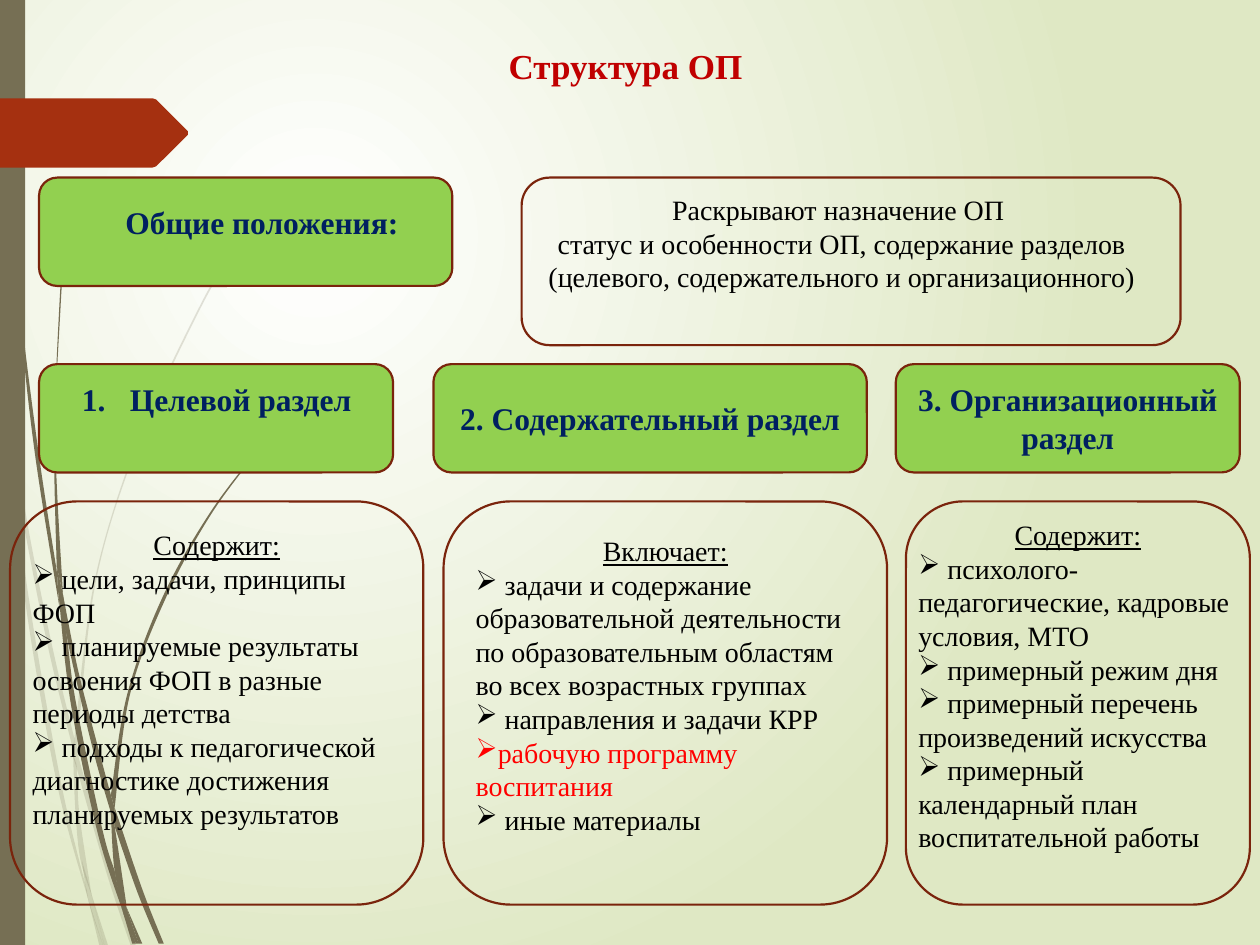
from dataclasses import dataclass
from typing import Optional

from lxml.etree import SubElement
from pptx import Presentation
from pptx.dml.color import RGBColor
from pptx.enum.shapes import MSO_SHAPE
from pptx.enum.text import MSO_ANCHOR, MSO_AUTO_SIZE, PP_ALIGN
from pptx.oxml.ns import qn
from pptx.util import Inches, Pt

FONT, BULLET_FONT, BULLET = "Times New Roman", "Wingdings", "Ø"
BROWN, ARROW_RED, BORDER = "766F54", "A53010", "7A240C"
GREEN, NAVY, BLACK = "92D050", "002060", "000000"
TITLE_RED, ACCENT_RED = "C00000", "FF0000"
HEADING_TOP, HEADING_HEIGHT = 2.89, 0.86
PANEL_TOP, PANEL_HEIGHT = 3.98, 3.2


@dataclass
class Blade:
    down: list[tuple[float, float]]
    back: list[tuple[float, float]]


@dataclass
class Frame:
    left: float
    top: float
    width: float
    height: float
    fill: Optional[str] = None


@dataclass
class Item:
    text: str
    color: str = BLACK


PALE_BLADES = [
    Blade([(0, 2.82), (0.06, 3.22), (0.08, 3.5)], [(0.07, 3.44), (0, 2.99)]),
    Blade([(0.1, 3.45), (0.25, 4.33), (0.43, 5.2), (0.59, 5.86)],
          [(0.59, 5.99), (0.4, 5.22), (0.25, 4.49), (0.12, 3.76), (0.1, 3.45)]),
    Blade([(0.61, 5.96), (0.88, 6.92), (1.08, 7.51)], [(1.04, 7.51), (0.85, 6.94), (0.61, 6.1)]),
    Blade([(0.73, 7.11), (0.86, 7.51)], [(0.83, 7.51), (0.73, 7.11)]),
    Blade([(0.08, 3.5), (0.19, 4.7), (0.45, 6.21), (0.7, 7.14)],
          [(0.69, 7.07), (0.48, 6.19), (0.22, 4.69), (0.12, 3.76), (0.08, 3.5)]),
    Blade([(0.58, 5.99), (0.6, 6.46), (0.64, 6.83), (0.73, 7.11)],
          [(0.72, 7.06), (0.63, 6.46), (0.61, 6.1), (0.58, 5.99)]),
    Blade([(2.17, 1.53), (1.86, 1.97), (1.58, 2.44), (1.1, 3.48), (0.75, 4.61), (0.59, 5.86)],
          [(0.61, 5.96), (0.76, 4.62), (1.11, 3.49), (1.59, 2.45), (1.87, 1.98), (2.17, 1.54)]),
    Blade([(0.7, 7.14), (0.82, 7.51)], [(0.79, 7.51), (0.7, 7.14)]),
    Blade([(0.59, 5.86), (0.58, 5.99), (0.61, 6.1)], [(0.61, 5.96), (0.59, 5.86)]),
    Blade([(0.65, 6.83), (0.7, 7.14), (0.82, 7.51)], [(0.83, 7.51), (0.73, 7.11), (0.65, 6.83)]),
]
DARK_BLADES = [
    Blade([(0.02, 0), (0.05, 1.1), (0.14, 2.33), (0.27, 3.55), (0.47, 4.81)],
          [(0.45, 4.53), (0.3, 3.55), (0.15, 2.32), (0.06, 1.09), (0.03, 0)]),
    Blade([(0.5, 4.72), (0.62, 5.32), (0.77, 5.9), (0.88, 6.31)],
          [(0.88, 6.45), (0.73, 5.92), (0.53, 5.05), (0.5, 4.72)]),
    Blade([(0.91, 6.41), (1.13, 7.06), (1.3, 7.49)], [(1.26, 7.49), (1.09, 7.08), (0.91, 6.56)]),
    Blade([(0.47, 4.77), (0.56, 5.57), (0.77, 6.59), (0.97, 7.22)],
          [(0.91, 6.91), (0.81, 6.57), (0.6, 5.56), (0.53, 5.05), (0.47, 4.77)]),
    Blade([(0.58, 1.41), (0.51, 1.93), (0.47, 2.45), (0.43, 3.49), (0.45, 4.49)],
          [(0.5, 4.72), (0.44, 3.49), (0.48, 2.45), (0.52, 1.93), (0.58, 1.41)]),
    Blade([(1, 7.19), (1.13, 7.49)], [(1.1, 7.49), (1, 7.19)]),
    Blade([(0.45, 4.49), (0.47, 4.77), (0.53, 5.05)], [(0.5, 4.72), (0.45, 4.49)]),
    Blade([(2.15, 3.44), (1.68, 4.05), (1.29, 4.74), (1.01, 5.51), (0.88, 6.31)],
          [(0.91, 6.41), (1.03, 5.52), (1.31, 4.76), (1.69, 4.06), (2.16, 3.44)]),
    Blade([(0.97, 7.22), (1.08, 7.49)], [(1.05, 7.49), (0.97, 7.22)]),
    Blade([(0.88, 6.45), (0.91, 6.91), (1, 7.19)], [(1, 7.16), (0.91, 6.56), (0.88, 6.45)]),
    Blade([(0.88, 6.31), (0.88, 6.45), (0.91, 6.56)], [(0.91, 6.41), (0.88, 6.31)]),
    Blade([(0.91, 6.91), (0.97, 7.22), (1.08, 7.49)], [(1.1, 7.49), (1, 7.19), (0.91, 6.91)]),
]
ARROW = [(0, 0.78), (1.21, 0.78), (1.24, 0.79), (1.49, 1.04), (1.49, 1.07), (1.24, 1.32),
         (1.21, 1.33), (0, 1.33)]


def color_of(value: str) -> RGBColor:
    return RGBColor.from_string(value)


def add_outline(slide, points, color: str, alpha: Optional[int] = None):
    corners = [(Inches(x), Inches(y)) for x, y in points]
    builder = slide.shapes.build_freeform(*corners[0])
    builder.add_line_segments(corners[1:], close=True)
    shape = builder.convert_to_shape()
    shape.shadow.inherit = False
    shape.fill.solid()
    shape.fill.fore_color.rgb = color_of(color)
    shape.line.fill.background()
    if alpha is not None:
        color_node = next(shape._element.spPr.iter(qn("a:srgbClr")))
        SubElement(color_node, qn("a:alpha"), val=str(alpha * 1000))
    return shape


def bend(shape, lines, side):
    padded = [side[0], *side, side[-1]]
    for line, a, b, c, d in zip(lines, padded, padded[1:], padded[2:], padded[3:]):
        first = [q + (r - p) / 6 for p, q, r in zip(a, b, c)]
        second = [q - (r - p) / 6 for p, q, r in zip(b, c, d)]
        line.tag = qn("a:cubicBezTo")
        for index, (x, y) in enumerate((first, second)):
            point = SubElement(line, qn("a:pt"), x=str(Inches(x) - shape.left),
                               y=str(Inches(y) - shape.top))
            line.insert(index, point)


def add_blade(slide, blade: Blade, alpha: Optional[int] = None):
    shape = add_outline(slide, blade.down + blade.back, BROWN, alpha)
    lines = list(shape._element.iter(qn("a:lnTo")))
    bend(shape, lines, blade.down)
    bend(shape, lines[len(blade.down):], blade.back)


def add_frame(slide, frame: Frame, kind=MSO_SHAPE.ROUNDED_RECTANGLE, border: Optional[str] = BORDER):
    box = slide.shapes.add_shape(kind, Inches(frame.left), Inches(frame.top),
                                 Inches(frame.width), Inches(frame.height))
    box.shadow.inherit = False
    if frame.fill:
        box.fill.solid()
        box.fill.fore_color.rgb = color_of(frame.fill)
    else:
        box.fill.background()
    if border:
        box.line.color.rgb = color_of(border)
        box.line.width = Pt(1.25)
    else:
        box.line.fill.background()
    box.text_frame.word_wrap = True
    box.text_frame.vertical_anchor = MSO_ANCHOR.MIDDLE
    return box


def add_text_box(slide, left: float, top: float, width: float, height: float):
    box = slide.shapes.add_textbox(Inches(left), Inches(top), Inches(width), Inches(height))
    box.text_frame.word_wrap = True
    box.text_frame.auto_size = MSO_AUTO_SIZE.SHAPE_TO_FIT_TEXT
    return box


def write(box, text: str, *, size=16, color=BLACK, bold=False, underline=False,
          align=PP_ALIGN.CENTER, bullet=False, numbered=False):
    frame = box.text_frame
    para = frame.add_paragraph() if frame.text else frame.paragraphs[0]
    para.alignment = align
    span = para.add_run()
    span.text = text
    span.font.name, span.font.size = FONT, Pt(size)
    span.font.bold, span.font.underline = bold, underline
    span.font.color.rgb = color_of(color)
    properties = para._p.get_or_add_pPr()
    if bullet:
        SubElement(properties, qn("a:buFont"), typeface=BULLET_FONT, charset="2")
        SubElement(properties, qn("a:buChar"), char=BULLET)
    if numbered:
        properties.set("marL", str(Inches(0.38)))
        properties.set("indent", str(-Inches(0.38)))
        SubElement(properties, qn("a:buAutoNum"), type="arabicPeriod")


def write_heading(box, text: str, numbered: bool = False):
    write(box, text, size=18, color=NAVY, bold=True, numbered=numbered)


def write_list(box, heading: str, *items: Item):
    write(box, heading, underline=True)
    for item in items:
        write(box, item.text, color=item.color, align=PP_ALIGN.LEFT, bullet=True)


def paint_background(slide):
    fill = slide.background.fill
    fill.gradient()
    for stop, color in zip(fill.gradient_stops, ("FFFFFF", "DFE8C4")):
        stop.color.rgb = color_of(color)
    gradient = next(slide._element.iter(qn("a:gradFill")))
    gradient.remove(gradient.find(qn("a:lin")))
    circle = SubElement(gradient, qn("a:path"), path="circle")
    SubElement(circle, qn("a:fillToRect"), l="50000", t="50000", r="100000", b="100000")


def main():
    deck = Presentation()
    deck.slide_width, deck.slide_height = Inches(10), Inches(7.5)
    slide = deck.slides.add_slide(deck.slide_layouts[5])
    paint_background(slide)
    for blades, alpha in ((PALE_BLADES, 20), (DARK_BLADES, None)):
        for blade in blades:
            add_blade(slide, blade, alpha)
    add_frame(slide, Frame(0, 0, 0.2, 7.5, BROWN), MSO_SHAPE.RECTANGLE, None)
    add_outline(slide, ARROW, ARROW_RED)

    title = slide.shapes.title
    title.left, title.top, title.width, title.height = map(Inches, (0.5, 0.3, 9, 0.95))
    title.text_frame.vertical_anchor = MSO_ANCHOR.TOP
    write(title, "Структура ОП ", size=20, color=TITLE_RED, bold=True)
    add_frame(slide, Frame(0.31, 1.41, 3.28, HEADING_HEIGHT, GREEN))
    write_heading(add_text_box(slide, 0.55, 1.56, 3.12, 0.4), "Общие положения: ")
    add_frame(slide, Frame(4.14, 1.41, 5.23, 1.33))
    purpose = add_text_box(slide, 4.14, 1.48, 5.08, 0.91)
    write(purpose, "Раскрывают назначение ОП ")
    write(purpose, "статус и особенности ОП, содержание разделов "
                   "(целевого, содержательного и организационного)")
    headings = [add_frame(slide, Frame(left, HEADING_TOP, width, HEADING_HEIGHT, GREEN))
                for left, width in ((0.31, 2.81), (3.44, 3.44), (7.11, 2.73))]
    write_heading(add_text_box(slide, 0.39, 2.97, 2.66, 0.4), "Целевой раздел", numbered=True)
    write_heading(headings[1], "2. Содержательный раздел")
    write_heading(headings[2], "3. Организационный раздел")
    panels = [add_frame(slide, Frame(left, PANEL_TOP, width, PANEL_HEIGHT))
              for left, width in ((0.08, 3.28), (3.52, 3.52), (7.19, 2.73))]
    write_list(add_text_box(slide, 0.16, 4.14, 3.12, 2.52), "Содержит:",
               Item(" цели, задачи, принципы ФОП"),
               Item(" планируемые результаты освоения ФОП в разные периоды детства"),
               Item(" подходы к педагогической диагностике достижения планируемых результатов"))
    panels[1].text_frame.margin_bottom = Inches(0.34)
    write_list(panels[1], "Включает:",
               Item(" задачи и содержание образовательной деятельности "
                    "по образовательным областям во всех возрастных группах"),
               Item(" направления и задачи КРР"),
               Item("рабочую программу воспитания", ACCENT_RED), Item(" иные материалы"))
    write_list(add_text_box(slide, 7.19, 4.06, 2.73, 3.1), "Содержит:",
               Item(" психолого-педагогические, кадровые условия, МТО"),
               Item(" примерный режим дня"), Item(" примерный перечень произведений искусства"),
               Item(" примерный календарный план воспитательной работы"))
    deck.save("out.pptx")


if __name__ == "__main__":
    main()
